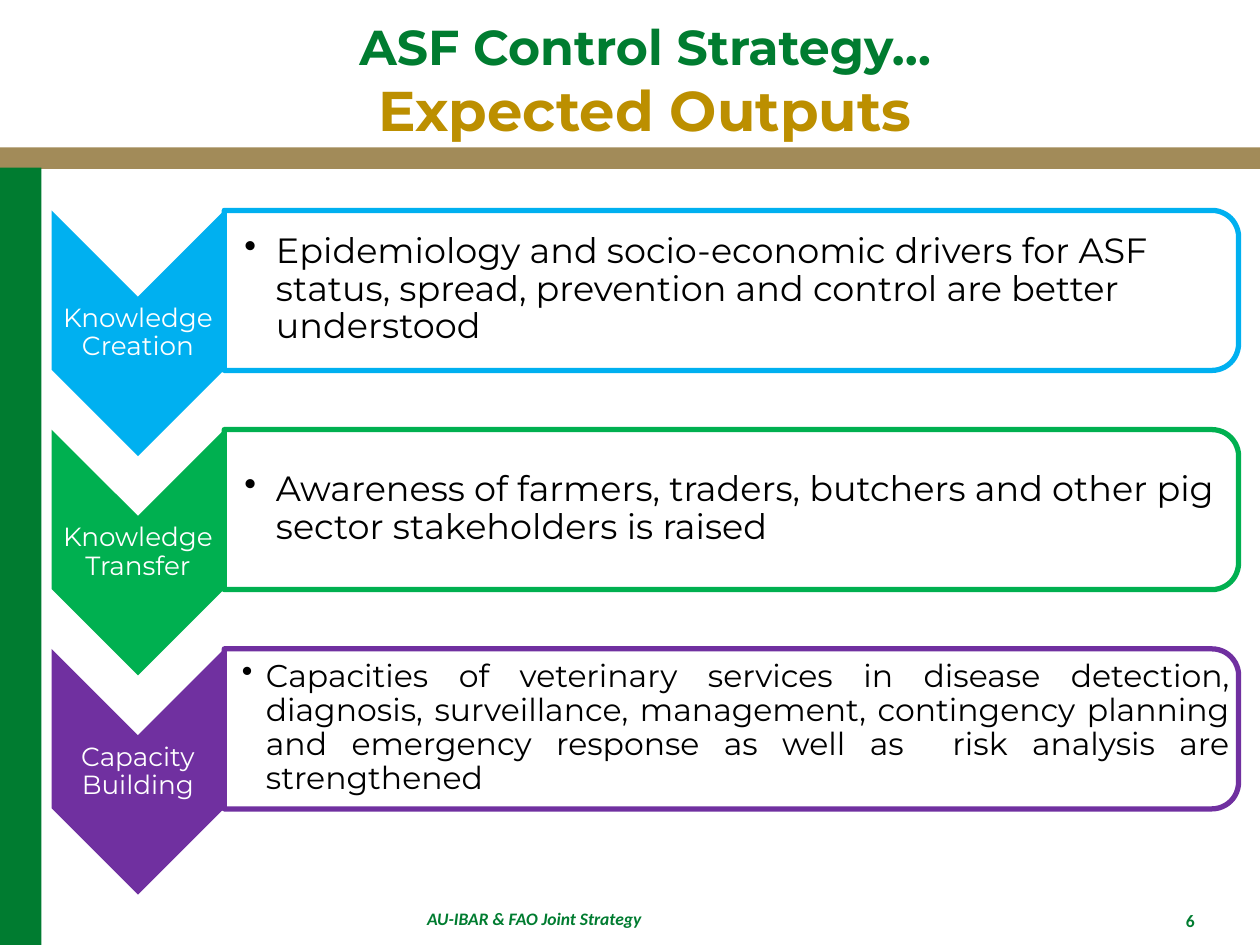
from dataclasses import dataclass

from lxml import etree
from pptx import Presentation
from pptx import util as u
from pptx.dml.color import RGBColor
from pptx.enum import shapes, text
from pptx.oxml.ns import qn

COLS, ROWS = 100, 75  # grid cells are a tenth of an inch
WIDTH, HEIGHT = u.Inches(10), u.Inches(7.5)


@dataclass(frozen=True)
class Theme:
    green: str = "007C30"
    tan: str = "A28B59"
    gold: str = "BC8F00"
    white: str = "FFFFFF"
    black: str = "000000"
    blue: str = "00B0F0"
    leaf: str = "00B050"
    purple: str = "7030A0"
    head_font: str = "Montserrat"
    foot_font: str = "Calibri"
    title: int = 28
    subtitle: int = 32
    body: int = 20
    dense: int = 18
    label: int = 15
    foot: int = 10


T = Theme()
ALIGN = text.PP_ALIGN

# Label, statement, colour, and format of the statement
OUTPUTS = [
    ("Knowledge Creation",
     "Epidemiology and socio-economic drivers for ASF status, spread, "
     "prevention and control are better understood",
     T.blue, dict(size=T.body, bullet=0.25, left=0.16)),
    ("Knowledge Transfer",
     "Awareness of farmers, traders, butchers and other pig sector "
     "stakeholders is raised",
     T.leaf, dict(size=T.body, bullet=0.25, left=0.16)),
    ("Capacity Building",
     "Capacities of veterinary services in disease detection, diagnosis, "
     "surveillance, management, contingency planning and emergency response "
     "as well as  risk analysis are strengthened",
     T.purple, dict(size=T.dense, bullet=0.19, left=0.14,
                    align=ALIGN.JUSTIFY)),
]
FIRST_ROW, PITCH = 16.7, 17.4


def grid(col, row, cols, rows):
    return (int(WIDTH * col / COLS), int(HEIGHT * row / ROWS),
            int(WIDTH * cols / COLS), int(HEIGHT * rows / ROWS))


def add_block(parent, kind, box, fill, line=None, alpha=None, turned=False):
    """Add a preset shape; a turned one fills the box after a quarter turn."""
    x, y, w, h = grid(*box)
    if turned:
        x, y, w, h = x + (w - h) // 2, y + (h - w) // 2, h, w
    sp = parent.shapes.add_shape(kind, x, y, w, h)
    sp.rotation = 90 if turned else 0
    sp.shadow.inherit = False
    sp.fill.solid()
    sp.fill.fore_color.rgb = RGBColor.from_string(fill)
    if alpha:
        clr = sp.fill._xPr.find(".//" + qn("a:srgbClr"))
        etree.SubElement(clr, qn("a:alpha"), val=str(alpha * 1000))
    if line:
        sp.line.color.rgb = RGBColor.from_string(line)
        sp.line.width = u.Pt(3)
    else:
        sp.line.fill.background()
    return sp


def add_run(p, words, size, color, font=T.head_font, bold=False, italic=False):
    r = p.add_run()
    r.text = words
    r.font.name, r.font.size = font, u.Pt(size)
    r.font.bold, r.font.italic = bold, italic
    r.font.color.rgb = RGBColor.from_string(color)


def add_text(parent, box, words, size=T.body, color=T.black, align=ALIGN.LEFT,
             anchor=text.MSO_ANCHOR.TOP, left=0.1, inset=None, spacing=None,
             bullet=None, **style):
    """Add a one-paragraph text box and return its paragraph."""
    tf = parent.shapes.add_textbox(*grid(*box)).text_frame
    tf.word_wrap = True
    tf.vertical_anchor = anchor
    tf.margin_left = u.Inches(left)
    if inset is not None:
        tf.margin_top = tf.margin_right = tf.margin_bottom = u.Inches(inset)
    p = tf.paragraphs[0]
    p.alignment = align
    if spacing:
        p.line_spacing = spacing
    if bullet:
        indent = u.Inches(bullet)
        pPr = p._p.get_or_add_pPr()
        pPr.set("marL", str(indent))
        pPr.set("indent", str(-indent))
        etree.SubElement(pPr, qn("a:buChar"), char="•")
    add_run(p, words, size, color, **style)
    return p


def add_output(parent, row, label, statement, color, style):
    """Add a chevron with its label and the panel beside it."""
    tight = dict(anchor=text.MSO_ANCHOR.MIDDLE, inset=0.01, spacing=0.9)
    add_block(parent, shapes.MSO_SHAPE.CHEVRON, (4.1, row, 13.7, 19.5),
              color, turned=True)
    add_text(parent, (4.1, row + 6.8, 13.7, 5.9), label, size=T.label,
             color=T.white, align=ALIGN.CENTER, left=0.01, **tight)
    add_block(parent, shapes.MSO_SHAPE.ROUND_2_SAME_RECTANGLE,
              (17.8, row, 80.5, 12.7), T.white, line=color, alpha=90,
              turned=True)
    add_text(parent, (17.8, row + 0.6, 79.9, 11.4), statement,
             **tight, **style)


def main():
    prs = Presentation()
    prs.slide_width, prs.slide_height = WIDTH, HEIGHT
    s = prs.slides.add_slide(prs.slide_layouts[6])

    # Frame bands
    rect = shapes.MSO_SHAPE.RECTANGLE
    add_block(s, rect, (0, 11.7, COLS, 1.7), T.tan)
    add_block(s, rect, (0, 13.3, 3.3, ROWS - 13.3), T.green)

    # Expected outputs
    group = s.shapes.add_group_shape()
    for i, output in enumerate(OUTPUTS):
        add_output(group, FIRST_ROW + i * PITCH, *output)

    # Title
    p = add_text(s, (13.3, 0.8, 75.8, 9.2), "ASF Control Strategy…",
                 size=T.title, color=T.green, align=ALIGN.CENTER, bold=True)
    p.add_line_break()
    add_run(p, "Expected Outputs", T.subtitle, T.gold, bold=True)

    # Footer and page number
    foot = dict(size=T.foot, color=T.green, font=T.foot_font, bold=True)
    add_text(s, (6.7, 71.6, 71.4, 3.2), "AU-IBAR & FAO Joint Strategy",
             align=ALIGN.CENTER, italic=True, **foot)
    add_text(s, (79, 71.7, 16.8, 3.2), "6", align=ALIGN.RIGHT, **foot)

    prs.save("out.pptx")


if __name__ == "__main__":
    main()
